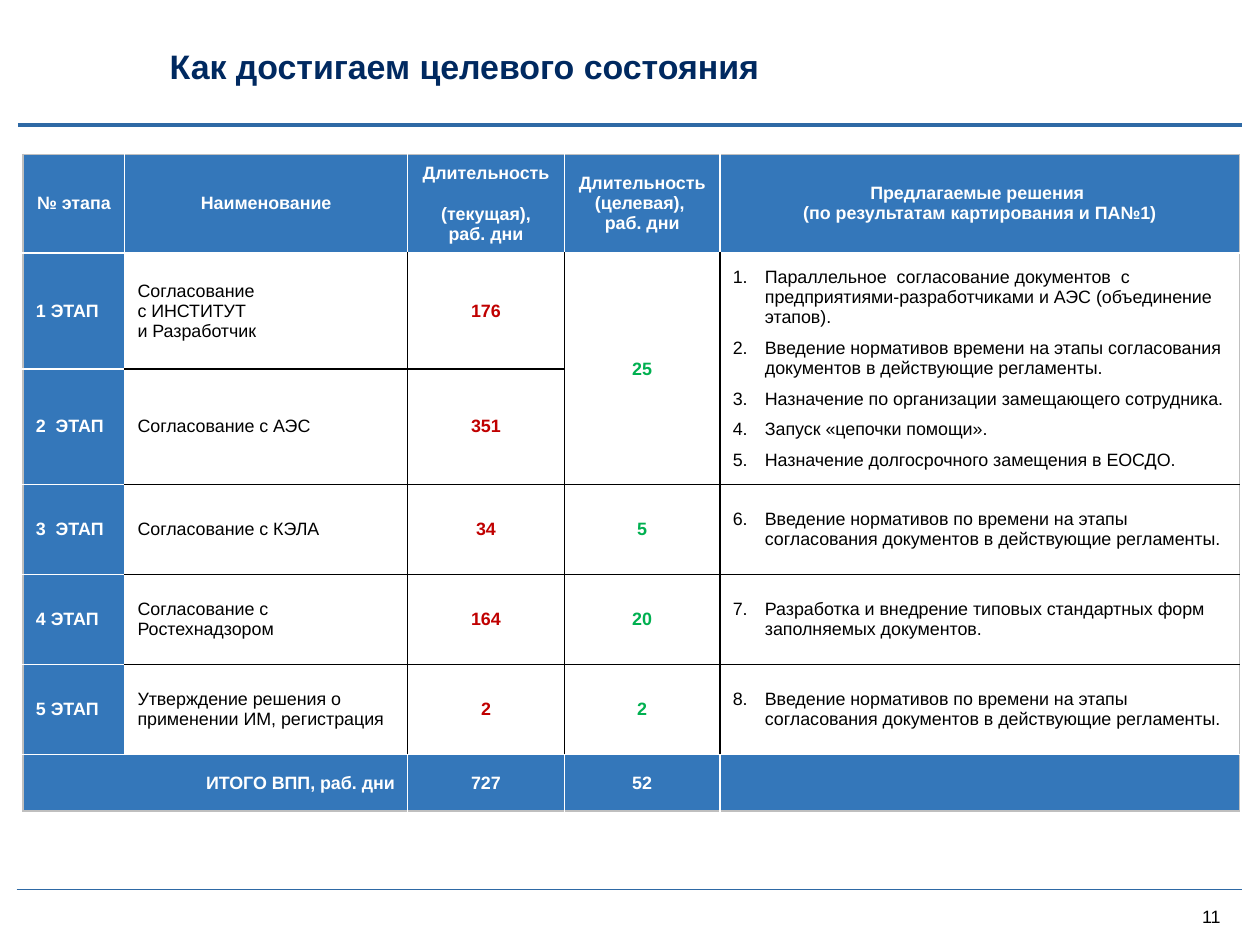
from lxml.etree import SubElement
from pptx import Presentation
from pptx.dml.color import RGBColor
from pptx.enum.shapes import MSO_CONNECTOR as Connector
from pptx.enum.text import MSO_ANCHOR as Anchor, MSO_AUTO_SIZE as AutoSize, PP_ALIGN as Align
from pptx.oxml.ns import qn
from pptx.util import Inches, Pt

NAVY = RGBColor(0x00, 0x29, 0x60)
RULE_BLUE = RGBColor(0x2E, 0x69, 0xA5)
CELL_BLUE = RGBColor(0x34, 0x77, 0xBA)
WHITE = RGBColor(0xFF, 0xFF, 0xFF)
BLACK = RGBColor(0x00, 0x00, 0x00)
GRAY = RGBColor(0xBF, 0xBF, 0xBF)
RED = RGBColor(0xC0, 0x00, 0x00)
GREEN = RGBColor(0x00, 0xB0, 0x50)

COLUMN_WIDTHS = [0.79, 2.2, 1.22, 1.21, 4.04]
ROW_HEIGHTS = [0.77, 0.9, 0.9, 0.7, 0.7, 0.7, 0.44]
LAST_ROW, LAST_COLUMN = len(ROW_HEIGHTS) - 1, len(COLUMN_WIDTHS) - 1

HEADERS = [
    "№ этапа",
    "Наименование",
    "Длительность \v (текущая), \vраб. дни",
    "Длительность (целевая), \vраб. дни",
    "Предлагаемые решения \v(по результатам картирования и ПА№1)",
]
NORMS = "Введение нормативов по времени на этапы согласования документов в действующие регламенты."
# Stage, name, current days, target days, solutions
STAGES = [
    ("1 ЭТАП", "Согласование \vс ИНСТИТУТ \vи Разработчик", "176", "25", [
        "Параллельное  согласование документов  с предприятиями-разработчиками и АЭС (объединение этапов).",
        "Введение нормативов времени на этапы согласования документов в действующие регламенты.",
        "Назначение по организации замещающего сотрудника.",
        "Запуск «цепочки помощи».",
        "Назначение долгосрочного замещения в ЕОСДО.",
    ]),
    ("2  ЭТАП", "Согласование с АЭС", "351", "", []),
    ("3  ЭТАП", "Согласование с КЭЛА", "34", "5", [NORMS]),
    ("4 ЭТАП", "Согласование с Ростехнадзором", "164", "20",
     ["Разработка и внедрение типовых стандартных форм заполняемых документов."]),
    ("5 ЭТАП", "Утверждение решения о применении ИМ, регистрация", "2", "2", [NORMS]),
]
TOTALS = {0: "ИТОГО ВПП, раб. дни", 2: "727", 3: "52"}


def set_font(para, color, size=10, bold=False):
    values = {"name": "Arial", "size": Pt(size), "bold": bold}
    for span in para.runs:
        for name, value in values.items():
            setattr(span.font, name, value)
        span.font.color.rgb = color
    # Line breaks take the text size too
    for line_break in para._p.findall(qn("a:br")):
        SubElement(line_break, qn("a:rPr"), sz=str(size * 100))


def set_frame(frame, **extra):
    values = {"margin_left": 0, "margin_right": 0, "margin_top": 0, "margin_bottom": 0,
              "vertical_anchor": Anchor.MIDDLE, "auto_size": AutoSize.NONE, **extra}
    for name, value in values.items():
        setattr(frame, name, value)


def place(shape, left, top, width, height):
    shape.left, shape.top = Inches(left), Inches(top)
    shape.width, shape.height = Inches(width), Inches(height)


def add_rule(page, left, right, top, weight):
    rule = page.shapes.add_connector(
        Connector.STRAIGHT, Inches(left), Inches(top), Inches(right), Inches(top))
    rule.line.color.rgb = RULE_BLUE
    rule.line.width = Pt(weight)
    SubElement(rule._element.spPr, qn("a:effectLst"))


def is_blue(row, column):
    return row in (0, LAST_ROW) or column == 0


def edge_color(row, column, next_row, next_column):
    if not (0 <= next_row <= LAST_ROW and 0 <= next_column <= LAST_COLUMN):
        return GRAY
    if is_blue(row, column) or is_blue(next_row, next_column):
        return WHITE
    return BLACK


def format_cell(cell, row, column):
    cell.vertical_anchor = Anchor.MIDDLE
    properties = cell._tc.get_or_add_tcPr()
    for tag, down, across in (("lnL", 0, -1), ("lnR", 0, 1), ("lnT", -1, 0), ("lnB", 1, 0)):
        edge = SubElement(properties, qn("a:" + tag), w=str(Pt(1)))
        fill = SubElement(edge, qn("a:solidFill"))
        color = edge_color(row, column, row + down, column + across)
        SubElement(fill, qn("a:srgbClr"), val=str(color))
    if is_blue(row, column):
        cell.fill.solid()
        cell.fill.fore_color.rgb = CELL_BLUE
    else:
        cell.fill.background()


def write_cell(cell, text, color, bold=True, align=Align.CENTER):
    if text:
        cell.text = text
        para = cell.text_frame.paragraphs[0]
        para.alignment = align
        set_font(para, color, bold=bold)


def write_solutions(cell, solutions, start):
    frame = cell.text_frame
    for index, text in enumerate(solutions):
        para = frame.add_paragraph() if index else frame.paragraphs[0]
        properties = para._p.get_or_add_pPr()
        properties.set("marL", str(Inches(0.25)))
        properties.set("indent", str(Inches(-0.25)))
        SubElement(properties, qn("a:buFont"), typeface="+mj-lt")
        SubElement(properties, qn("a:buAutoNum"), type="arabicPeriod", startAt=str(start))
        if index:
            para.space_before = Pt(6)
        para.add_run().text = text
        set_font(para, BLACK)


def add_stage_table(page):
    table = page.shapes.add_table(
        len(ROW_HEIGHTS), len(COLUMN_WIDTHS), Inches(0.18), Inches(1.2),
        Inches(sum(COLUMN_WIDTHS)), Inches(sum(ROW_HEIGHTS))).table
    table.first_row = table.horz_banding = False
    for column, width in zip(table.columns, COLUMN_WIDTHS):
        column.width = Inches(width)
    for row, height in zip(table.rows, ROW_HEIGHTS):
        row.height = Inches(height)
    for row in range(len(ROW_HEIGHTS)):
        for column in range(len(COLUMN_WIDTHS)):
            format_cell(table.cell(row, column), row, column)

    # Merged areas: target and solutions of stages 1 and 2, total label
    for column in (3, 4):
        table.cell(1, column).merge(table.cell(2, column))
    table.cell(LAST_ROW, 0).merge(table.cell(LAST_ROW, 1))

    # Header, stages and totals
    for column, text in enumerate(HEADERS):
        write_cell(table.cell(0, column), text, WHITE)
    number = 1
    for row, (stage, name, current, target, solutions) in enumerate(STAGES, 1):
        write_cell(table.cell(row, 0), stage, WHITE, align=Align.LEFT)
        write_cell(table.cell(row, 1), name, BLACK, bold=False, align=Align.LEFT)
        write_cell(table.cell(row, 2), current, RED)
        write_cell(table.cell(row, 3), target, GREEN)
        write_solutions(table.cell(row, 4), solutions, number)
        number += len(solutions)
    for column, text in TOTALS.items():
        align = Align.CENTER if column else Align.RIGHT
        write_cell(table.cell(LAST_ROW, column), text, WHITE, align=align)


def add_title(page, text):
    title = page.shapes.title
    place(title, 1.32, 0.35, 7.16, 0.32)
    set_frame(title.text_frame, text=text, word_wrap=True)
    para = title.text_frame.paragraphs[0]
    para.alignment = Align.LEFT
    set_font(para, NAVY, size=19, bold=True)


def add_page_number(page, text):
    box = page.shapes.add_textbox(Inches(9.35), Inches(7.04), Inches(0.23), Inches(0.17))
    set_frame(box.text_frame, text=text, word_wrap=False)
    set_font(box.text_frame.paragraphs[0], BLACK)


def main():
    deck = Presentation()
    deck.slide_width, deck.slide_height = Inches(9.8), Inches(7.35)
    page = deck.slides.add_slide(deck.slide_layouts[5])
    # Frame lines
    add_rule(page, 0.13, 9.66, 6.92, 0.75)
    add_rule(page, 0.14, 9.66, 0.97, 2.25)
    # Content
    add_page_number(page, "11")
    add_title(page, "Как достигаем целевого состояния")
    add_stage_table(page)
    deck.save("out.pptx")


if __name__ == "__main__":
    main()
